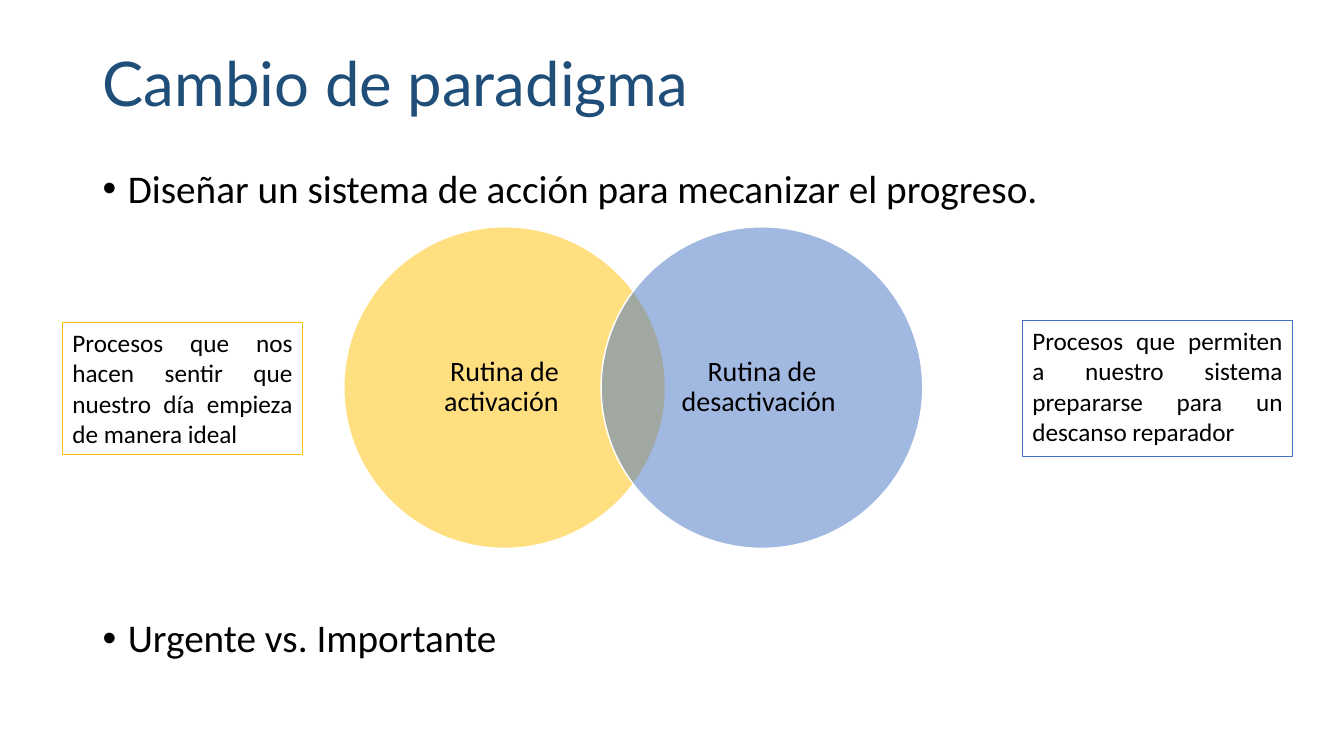
from dataclasses import dataclass
from math import sqrt

from lxml.etree import SubElement
from pptx import Presentation
from pptx.dml.color import RGBColor
from pptx.enum.shapes import MSO_SHAPE
from pptx.enum.text import MSO_ANCHOR, MSO_AUTO_SIZE, PP_ALIGN
from pptx.oxml.ns import qn
from pptx.util import Inches, Pt


@dataclass(frozen=True)
class Theme:
    title_font: str = "Lato"
    body_font: str = "Calibri"
    title_color: str = "1F4E79"
    text_color: str = "000000"
    paper: str = "FFFFFF"
    activation: str = "FFC000"
    deactivation: str = "4472C4"
    title_size: int = 44
    bullet_size: int = 28
    routine_size: int = 20
    note_size: int = 18
    outline: float = 1


class SlideBuilder:
    def __init__(self, slide, theme):
        self.slide = slide
        self.theme = theme

    def add_wording(self, paragraph, wording, size, font=None, color=None):
        run = paragraph.add_run()
        run.text = wording
        run.font.size = Pt(size)
        run.font.name = font or self.theme.body_font
        run.font.color.rgb = RGBColor.from_string(color or self.theme.text_color)

    def text_frame(self, left, top, width, height, anchor):
        area = self.slide.shapes.add_textbox(
            Inches(left), Inches(top), Inches(width), Inches(height))
        area.text_frame.word_wrap = True
        area.text_frame.vertical_anchor = anchor
        return area.text_frame

    def shape(self, preset, left, top, width, height, fill, line):
        outline = self.slide.shapes.add_shape(
            preset, Inches(left), Inches(top), Inches(width), Inches(height))
        outline.shadow.inherit = False
        outline.fill.solid()
        outline.fill.fore_color.rgb = RGBColor.from_string(fill)
        outline.line.color.rgb = RGBColor.from_string(line)
        outline.line.width = Pt(self.theme.outline)
        return outline

    def title(self, wording, left, top, width, height):
        frame = self.text_frame(left, top, width, height, MSO_ANCHOR.MIDDLE)
        heading = frame.paragraphs[0]
        heading.line_spacing = 0.9
        self.add_wording(heading, wording, self.theme.title_size,
                         self.theme.title_font, self.theme.title_color)

    def bullets(self, points, gap, left, top, width, height):
        frame = self.text_frame(left, top, width, height, MSO_ANCHOR.TOP)
        for index, wording in enumerate(points):
            point = frame.add_paragraph() if index else frame.paragraphs[0]
            point.line_spacing = 0.9
            point.space_before = Pt(gap if index else 0)
            properties = point._p.get_or_add_pPr()
            properties.set("marL", str(Inches(0.25)))
            properties.set("indent", str(-Inches(0.25)))
            SubElement(properties, qn("a:buFont"), typeface="Arial")
            SubElement(properties, qn("a:buChar"), char="•")
            self.add_wording(point, wording, self.theme.bullet_size)

    def routine(self, wording, color, left, top, diameter):
        circle = self.shape(MSO_SHAPE.OVAL, left, top, diameter, diameter,
                            color, self.theme.paper)
        tint = circle._element.spPr.find(qn("a:solidFill"))[0]
        SubElement(tint, qn("a:alpha"), val="50000")

        side = diameter / sqrt(2)
        inset = (diameter - side) / 2
        frame = self.text_frame(left + inset, top + inset, side, side,
                                MSO_ANCHOR.MIDDLE)
        frame.margin_left = frame.margin_right = Inches(0.18)
        frame.margin_top = frame.margin_bottom = Inches(0.03)
        label = frame.paragraphs[0]
        label.alignment = PP_ALIGN.CENTER
        label.line_spacing = 0.9
        self.add_wording(label, wording, self.theme.routine_size)

    def note(self, wording, color, left, top, width, height):
        box = self.shape(MSO_SHAPE.RECTANGLE, left, top, width, height,
                         self.theme.paper, color)
        frame = box.text_frame
        frame.word_wrap = True
        frame.auto_size = MSO_AUTO_SIZE.SHAPE_TO_FIT_TEXT
        frame.vertical_anchor = MSO_ANCHOR.TOP
        explanation = frame.paragraphs[0]
        explanation.alignment = PP_ALIGN.JUSTIFY
        self.add_wording(explanation, wording, self.theme.note_size)


def main():
    presentation = Presentation()
    presentation.slide_width = Inches(13.33)
    presentation.slide_height = Inches(7.5)
    theme = Theme()
    slide = presentation.slides.add_slide(presentation.slide_layouts[6])
    builder = SlideBuilder(slide, theme)

    builder.title("Cambio de paradigma", 0.92, 0.13, 11.5, 1.45)
    builder.bullets(
        ["Diseñar un sistema de acción para mecanizar el progreso.",
         "Urgente vs. Importante"],
        291, 0.92, 1.63, 11.62, 5.09)

    routines = [("Rutina de activación ", theme.activation),
                ("Rutina de desactivación ", theme.deactivation)]
    diameter = 3.19
    for index, (wording, color) in enumerate(routines):
        builder.routine(wording, color, 3.41 + index * 0.8 * diameter, 2.25, diameter)

    builder.note("Procesos que nos hacen sentir que nuestro día empieza de manera ideal",
                 theme.activation, 0.62, 3.2, 2.38, 1.31)
    builder.note("Procesos que permiten a nuestro sistema prepararse para un descanso reparador",
                 theme.deactivation, 10.14, 3.18, 2.68, 1.35)

    presentation.save("out.pptx")


if __name__ == "__main__":
    main()
